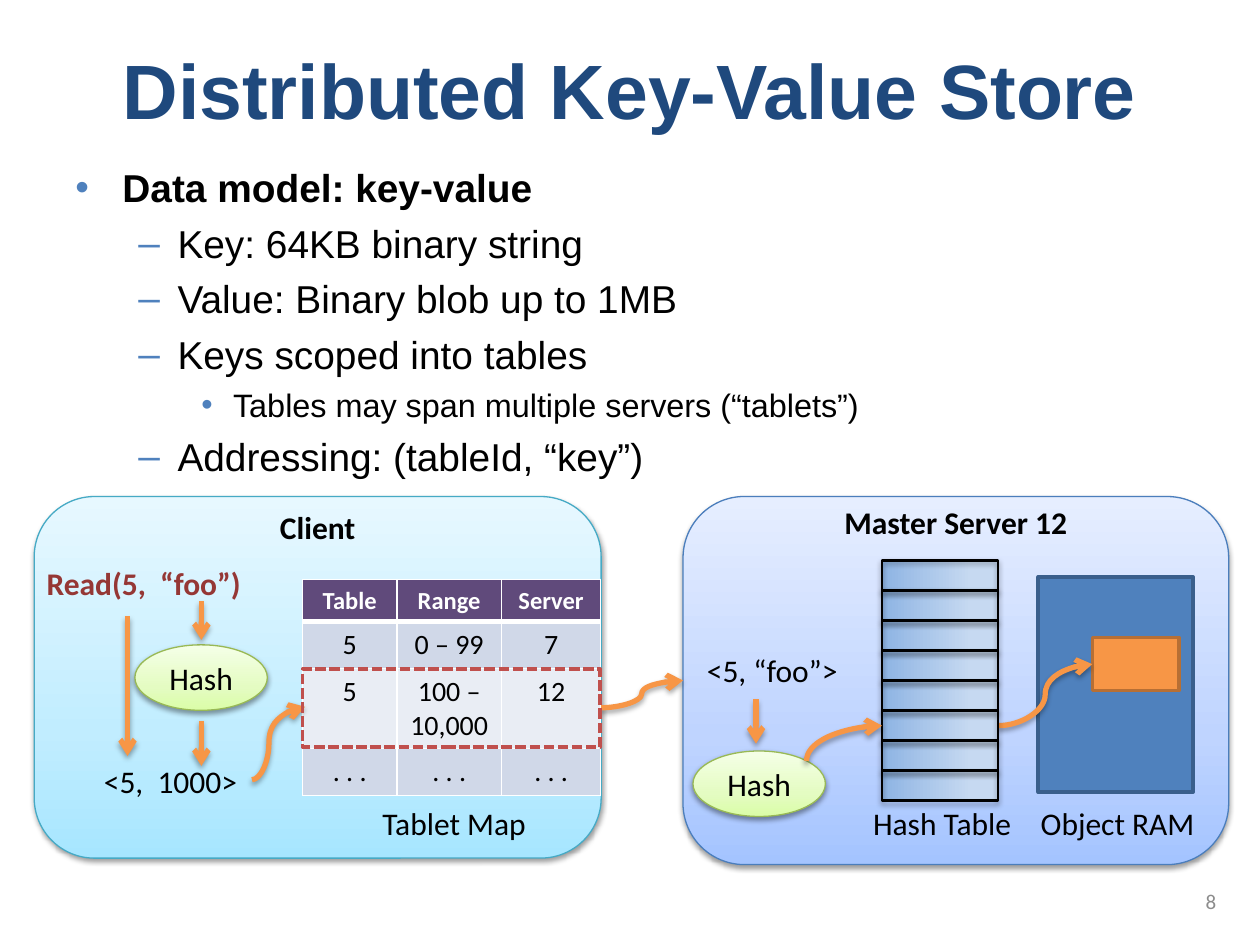
from copy import deepcopy
from dataclasses import dataclass

from lxml.etree import SubElement
from pptx import Presentation
from pptx.dml.color import RGBColor
from pptx.enum.dml import MSO_LINE
from pptx.enum.shapes import MSO_CONNECTOR as Link, MSO_SHAPE as Geom
from pptx.enum.text import MSO_ANCHOR as Anchor, PP_ALIGN as Align
from pptx.oxml.ns import qn
from pptx.util import Cm, Pt


@dataclass(frozen=True)
class Theme:
    heading_font: str = "Arial"
    label_font: str = "Calibri"
    title_size: float = 44
    body_size: float = 22.2
    detail_size: float = 18.5
    label_size: float = 18
    cell_size: float = 16
    header_size: float = 14
    number_size: float = 12
    black: str = "000000"
    white: str = "FFFFFF"
    title: str = "1F497D"
    blue: str = "4F81BD"
    blue_edge: str = "3A5F8C"
    panel_edge: str = "4B7EBC"
    client_edge: str = "46AAC5"
    hash_edge: str = "98B955"
    orange: str = "F79646"
    orange_edge: str = "B76F34"
    request: str = "953735"
    highlight: str = "C0504D"
    number: str = "8C8C8C"
    header: str = "604A7B"
    bands: tuple = ("D0D8E8", "E9EDF4")
    client_fill: tuple = ((0, "A7E6FF"), (0.35, "C1EDFF"), (1, "E7F8FF"))
    server_fill: tuple = ((0, "A4C4FF"), (0.35, "BFD4FF"), (1, "E6EEFF"))
    hash_fill: tuple = ((0, "DAFDA7"), (0.35, "E4FCC2"), (1, "F5FFE7"))
    slots_fill: tuple = ((0, "8EB4E3"), (0.77, "C6D9F1"))


THEME = Theme()
SHAPE_SHADOW = (1.6, 38)
LINE_SHADOW = (1.8, 35)


def rgb(value):
    return RGBColor.from_string(value)


def set_font(para, size, color=THEME.black, bold=False, name=THEME.label_font):
    font = para.font
    font.name, font.size, font.bold = name, Pt(size), bold
    font.color.rgb = rgb(color)


def add_label(page, text, left, top, width, height=1.02, align=Align.LEFT, size=THEME.label_size,
              color=THEME.black, bold=False, name=THEME.label_font, anchor=Anchor.TOP, wrap=True):
    box = page.shapes.add_textbox(Cm(left), Cm(top), Cm(width), Cm(height))
    box.text_frame.word_wrap = wrap
    box.text_frame.vertical_anchor = anchor
    para = box.text_frame.paragraphs[0]
    para.text, para.alignment = text, align
    set_font(para, size, color, bold, name)


def add_bullets(page, items):
    """items holds (level, text); level 0 is bold and level 2 smaller."""
    styles = [(0.95, -0.95, "•", THEME.body_size), (2.06, -0.79, "–", THEME.body_size),
              (3.18, -0.64, "•", THEME.detail_size)]
    box = page.shapes.add_textbox(Cm(1.27), Cm(3.18), Cm(22.86), Cm(6.55))
    frame = box.text_frame
    frame.word_wrap = True
    for index, (level, text) in enumerate(items):
        margin, indent, mark, size = styles[level]
        para = frame.add_paragraph() if index else frame.paragraphs[0]
        para.text, para.level, para.space_before = text, level, Pt(round(size * 0.23, 1))
        props = para._p.get_or_add_pPr()
        props.set("marL", str(Cm(margin)))
        props.set("indent", str(Cm(indent)))
        SubElement(SubElement(props, qn("a:buClr")), qn("a:srgbClr"), val=THEME.blue)
        SubElement(props, qn("a:buFont"), typeface=THEME.heading_font)
        SubElement(props, qn("a:buChar"), char=mark)
        set_font(para, size, bold=level == 0, name=THEME.heading_font)


def add_shadow(effects, distance, opacity):
    shadow = SubElement(effects, qn("a:outerShdw"), blurRad=str(Pt(3.1)), dist=str(Pt(distance)),
                        dir="5400000", rotWithShape="0")
    color = SubElement(shadow, qn("a:srgbClr"), val=THEME.black)
    SubElement(color, qn("a:alpha"), val=str(opacity * 1000))


def fill_gradient(shape, stops, angle):
    fill = shape.fill
    fill.gradient()
    fill.gradient_angle = angle
    stop_list = shape._element.spPr.find(".//" + qn("a:gsLst"))
    for _ in stops[2:]:
        stop_list.append(deepcopy(stop_list[0]))
    for stop, (position, color) in zip(fill.gradient_stops, stops):
        stop.position, stop.color.rgb = position, rgb(color)


def add_block(page, geom, left, top, width, height, edge, weight, fill=None, angle=90, shadow=None):
    """fill is a colour, a tuple of gradient stops, or None for an empty outline."""
    shape = page.shapes.add_shape(geom, Cm(left), Cm(top), Cm(width), Cm(height))
    if fill is None:
        shape.fill.background()
    elif isinstance(fill, str):
        shape.fill.solid()
        shape.fill.fore_color.rgb = rgb(fill)
    else:
        fill_gradient(shape, fill, angle)
    shape.line.color.rgb, shape.line.width = rgb(edge), Pt(weight)
    shape.shadow.inherit = False
    if shadow:
        add_shadow(shape._element.spPr.find(qn("a:effectLst")), *shadow)
    return shape


def add_hash(page, left, top):
    shape = add_block(page, Geom.OVAL, left, top, 2.67, 1.32, THEME.hash_edge, 0.75,
                      THEME.hash_fill, shadow=SHAPE_SHADOW)
    frame = shape.text_frame
    frame.margin_left = frame.margin_right = 0
    frame.vertical_anchor = Anchor.MIDDLE
    para = frame.paragraphs[0]
    para.text, para.alignment = "Hash", Align.CENTER
    set_font(para, THEME.label_size)


def add_arrow(page, start, end, kind=Link.STRAIGHT, bend=None):
    x1, y1, x2, y2 = map(Cm, (*start, *end))
    arrow = page.shapes.add_connector(kind, x1, y1, x2, y2)
    arrow.line.color.rgb, arrow.line.width = rgb(THEME.orange), Pt(3)
    props = arrow._element.spPr
    SubElement(props.find(qn("a:ln")), qn("a:tailEnd"), type="arrow")
    add_shadow(SubElement(props, qn("a:effectLst")), *LINE_SHADOW)
    if bend:
        guides = props.find(".//" + qn("a:avLst"))
        SubElement(guides, qn("a:gd"), name="adj1", fmla=f"val {int(bend * 100000)}")
    return arrow


def add_quarter_arrow(page, start, end):
    """Curve that leaves upwards and arrives from the left."""
    arrow = add_arrow(page, start, end, Link.CURVE)
    middle_x, middle_y = arrow.left + arrow.width // 2, arrow.top + arrow.height // 2
    arrow.width, arrow.height = arrow.height, arrow.width
    arrow.left, arrow.top = middle_x - arrow.width // 2, middle_y - arrow.height // 2
    props = arrow._element.spPr
    props.find(qn("a:prstGeom")).set("prst", "curvedConnector2")
    for key, value in (("rot", "5400000"), ("flipH", "1"), ("flipV", "1")):
        props.find(qn("a:xfrm")).set(key, value)


def set_borders(cell, **weights):
    props = cell._tc.get_or_add_tcPr()
    for side in "LRTB":
        line = SubElement(props, qn(f"a:ln{side}"), w=str(Pt(weights.get(side, 1))))
        SubElement(SubElement(line, qn("a:solidFill")), qn("a:srgbClr"), val=THEME.white)


def add_tablet_map(page):
    rows = [("Table", "Range", "Server"), ("5", "0 – 99", "7"),
            ("5", "100 – 10,000", "12"), (". . .",) * 3]
    widths, heights = (1.9, 2.11, 2), (0.85, 0.95, 1.58, 0.95)
    table = page.shapes.add_table(4, 3, Cm(6.1), Cm(11.68), Cm(sum(widths)), Cm(sum(heights))).table
    for column, width in zip(table.columns, widths):
        column.width = Cm(width)
    for r, (values, height) in enumerate(zip(rows, heights)):
        table.rows[r].height = Cm(height)
        for c, value in enumerate(values):
            cell = table.cell(r, c)
            set_borders(cell, **{0: {"B": 3}, 1: {"T": 3}}.get(r, {}))
            cell.fill.solid()
            cell.fill.fore_color.rgb = rgb(THEME.bands[(r - 1) % 2] if r else THEME.header)
            para = cell.text_frame.paragraphs[0]
            para.text, para.alignment = value, Align.CENTER
            if r:
                set_font(para, THEME.cell_size)
            else:
                set_font(para, THEME.header_size, THEME.white, bold=True)


def add_hash_table(page, left=17.78, top=11.3, width=2.34, height=4.84, slots=8):
    add_block(page, Geom.RECTANGLE, left, top, width, height, THEME.panel_edge, 0.75,
              THEME.slots_fill, angle=0)
    step = height / slots
    for slot in range(slots):
        add_block(page, Geom.RECTANGLE, left, top + slot * step, width, step, THEME.black, 1.5,
                  shadow=LINE_SHADOW)


def add_panel(page, title, left, width, height, title_top, edge, fill):
    add_block(page, Geom.ROUNDED_RECTANGLE, left, 10.01, width, height, edge, 0.75, fill,
              shadow=SHAPE_SHADOW)
    add_label(page, title, left, title_top, width, align=Align.CENTER, bold=True)


def main():
    deck = Presentation()
    deck.slide_width, deck.slide_height = Cm(25.4), Cm(19.05)
    page = deck.slides.add_slide(deck.slide_layouts[6])
    add_label(page, "Distributed Key-Value Store", 1.27, 0.2, 22.86, 3.18, Align.CENTER,
              THEME.title_size, THEME.title, True, THEME.heading_font, Anchor.MIDDLE)
    add_bullets(page, [(0, "Data model: key-value"), (1, "Key: 64KB binary string"),
                       (1, "Value: Binary blob up to 1MB"), (1, "Keys scoped into tables"),
                       (2, "Tables may span multiple servers (“tablets”)"),
                       (1, "Addressing: (tableId, “key”)")])
    add_label(page, "8", 18.85, 17.65, 5.92, align=Align.RIGHT, size=THEME.number_size,
              color=THEME.number, anchor=Anchor.MIDDLE)

    add_panel(page, "Master Server 12", 13.77, 11, 7.42, 10.01, THEME.panel_edge, THEME.server_fill)
    add_block(page, Geom.RECTANGLE, 20.93, 11.63, 3.12, 4.34, THEME.blue_edge, 2, THEME.blue)
    add_label(page, "Hash Table", 17.35, 16.08, 3.48)
    add_label(page, "Object RAM", 20.73, 16.08, 4.04)

    add_panel(page, "Client", 0.69, 11.43, 7.29, 10.11, THEME.client_edge, THEME.client_fill)
    add_label(page, "Tablet Map", 6.83, 16.08, 4.65, align=Align.CENTER)
    add_label(page, "Read(5,  “foo”)", 0.69, 11.25, 4.6, color=THEME.request, bold=True)
    add_hash(page, 2.72, 13)
    add_label(page, "<5,  1000>", 0, 15.24, 5.03, align=Align.RIGHT)
    for x, top, bottom in ((4.06, 12.12, 12.9), (4.06, 14.53, 15.44), (2.57, 12.42, 15.24)):
        add_arrow(page, (x, top), (x, bottom))

    add_arrow(page, (12.1, 14.27), (13.77, 13.72), Link.CURVE)
    add_block(page, Geom.RECTANGLE, 22.02, 12.85, 1.75, 1.07, THEME.orange_edge, 2, THEME.orange)
    add_arrow(page, (20.12, 14.63), (22.02, 13.39), Link.CURVE)
    add_tablet_map(page)
    add_arrow(page, (5.08, 15.72), (6.15, 14.25), Link.CURVE, bend=0.32)
    marker = add_block(page, Geom.RECTANGLE, 6.1, 13.49, 6, 1.57, THEME.highlight, 2)
    marker.line.dash_style = MSO_LINE.SQUARE_DOT

    add_hash_table(page)
    add_label(page, "<5, “foo”>", 14, 13, 3.18, wrap=False)
    add_hash(page, 13.97, 15.14)
    add_arrow(page, (15.24, 14.1), (15.24, 14.99))
    add_quarter_arrow(page, (16.26, 15.34), (17.78, 14.63))
    deck.save("out.pptx")


if __name__ == "__main__":
    main()
